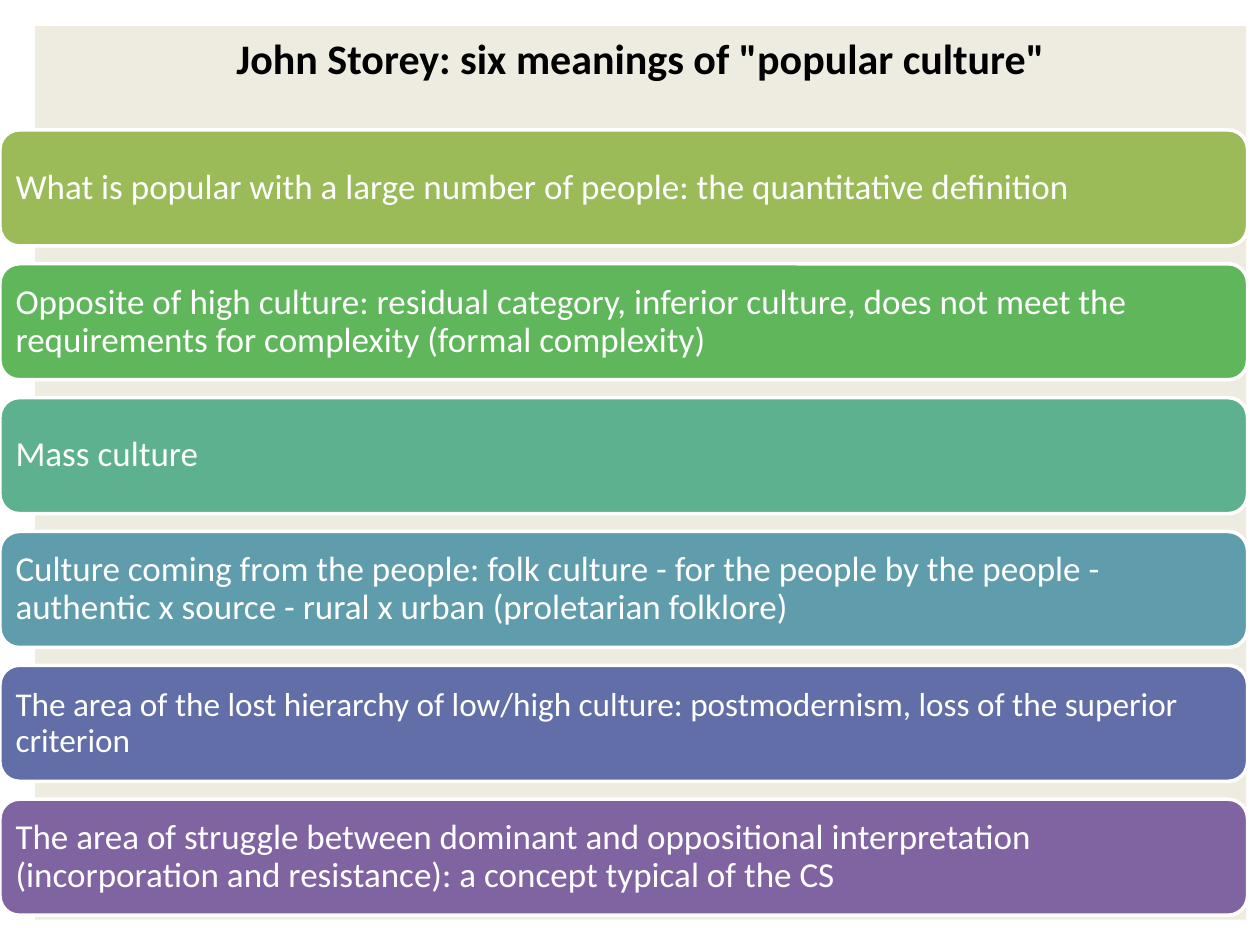
import pptx
import pptx.dml.color
import pptx.enum.shapes
import pptx.enum.text
import pptx.util
from pptx.util import Cm

FONT = "Calibri"
MEANINGS = [
    ("What is popular with a large number of people: the quantitative definition", "9BBB59", 20),
    ("Opposite of high culture: residual category, inferior culture, does not meet the "
     "requirements for complexity (formal complexity)", "5FB65B", 20),
    ("Mass culture", "5DB18E", 20),
    ("Culture coming from the people: folk culture - for the people by the people - "
     "authentic x source - rural x urban (proletarian folklore)", "5F9DAC", 20),
    ("The area of the lost hierarchy of low/high culture: postmodernism, loss of the "
     "superior criterion", "626EA7", 19),
    ("The area of struggle between dominant and oppositional interpretation "
     "(incorporation and resistance): a concept typical of the CS", "8064A2", 20),
]


def rgb(hex_colour):
    return pptx.dml.color.RGBColor.from_string(hex_colour)


def add_filled(slide, preset, box, fill):
    block = slide.shapes.add_shape(preset, *box)
    block.shadow.inherit = False
    block.fill.solid()
    block.fill.fore_color.rgb = rgb(fill)
    block.line.fill.background()
    block.text_frame.word_wrap = True
    return block


def write(block, words, size, colour, align, bold=False):
    block.text_frame.text = words
    paragraph = block.text_frame.paragraphs[0]
    paragraph.alignment = align
    font = paragraph.runs[0].font
    font.name = FONT
    font.size = pptx.util.Pt(size)
    font.bold = bold
    font.color.rgb = rgb(colour)
    return paragraph


def add_title_panel(slide, box):
    panel = add_filled(slide, pptx.enum.shapes.MSO_SHAPE.RECTANGLE, box, "EEECE1")
    panel.text_frame.vertical_anchor = pptx.enum.text.MSO_ANCHOR.TOP
    write(panel, 'John Storey: six meanings of "popular culture"', 24, "000000",
          pptx.enum.text.PP_ALIGN.CENTER, bold=True)


def add_meanings(slide, box, gap):
    """Stack one rounded bar per meaning, filling the box with equal gaps."""
    left, top, width, height = box
    bar_height = (height - gap * (len(MEANINGS) - 1)) // len(MEANINGS)
    for row, (meaning, fill, size) in enumerate(MEANINGS):
        bar_box = (left, top + row * (bar_height + gap), width, bar_height)
        bar = add_filled(slide, pptx.enum.shapes.MSO_SHAPE.ROUNDED_RECTANGLE, bar_box, fill)
        bar.line.color.rgb = rgb("FFFFFF")
        bar.line.width = pptx.util.Pt(2)
        frame = bar.text_frame
        frame.vertical_anchor = pptx.enum.text.MSO_ANCHOR.MIDDLE
        frame.margin_left = frame.margin_right = Cm(0.2)
        frame.margin_top = frame.margin_bottom = Cm(0.2)
        paragraph = write(bar, meaning, size, "FFFFFF", pptx.enum.text.PP_ALIGN.LEFT)
        paragraph.line_spacing = 0.9


def main():
    deck = pptx.Presentation()
    deck.slide_width, deck.slide_height = Cm(25.4), Cm(19.05)
    slide = deck.slides.add_slide(deck.slide_layouts[6])
    add_title_panel(slide, (Cm(0.71), Cm(0.53), Cm(24.41), Cm(18.01)))
    add_meanings(slide, (Cm(0), Cm(2.62), Cm(25.15), Cm(15.83)), gap=Cm(0.36))
    deck.save("out.pptx")


if __name__ == "__main__":
    main()
